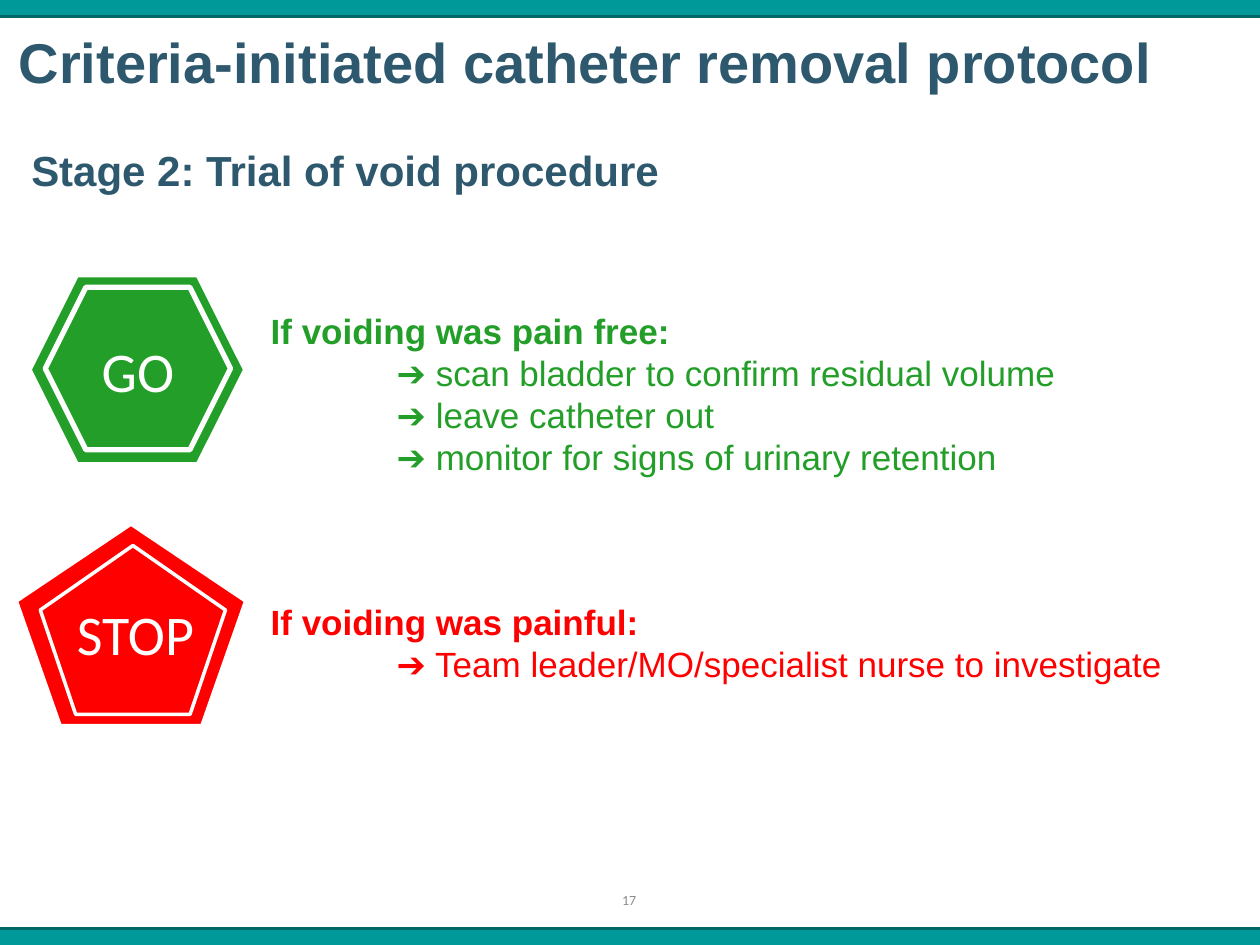
from dataclasses import dataclass

from lxml import etree
from pptx import Presentation
from pptx.dml.color import RGBColor
from pptx.enum import shapes, text
from pptx.oxml import ns
from pptx.util import Inches, Pt

TEAL = RGBColor(0x00, 0x99, 0x99)
DARK_TEAL = RGBColor(0x00, 0x66, 0x66)
SLATE = RGBColor(0x2D, 0x58, 0x6D)
GREEN = RGBColor(0x23, 0x9F, 0x29)
RED = RGBColor(0xFF, 0x00, 0x00)
GREY = RGBColor(0x8C, 0x8C, 0x8C)
WHITE = RGBColor(0xFF, 0xFF, 0xFF)

SLIDE_WIDTH, SLIDE_HEIGHT = 10, 7.5
BAND_HEIGHT = 0.13


@dataclass(frozen=True)
class Box:
    left: float
    top: float
    width: float
    height: float

    def lengths(self) -> tuple:
        return tuple(Inches(n) for n in (self.left, self.top, self.width, self.height))


@dataclass(frozen=True)
class Style:
    size: float
    color: RGBColor
    font: str = "Arial"
    bold: bool = False
    align: text.PP_ALIGN = text.PP_ALIGN.LEFT


@dataclass(frozen=True)
class Outcome:
    """A sign with a double outline, and the steps that follow from it."""
    sign: str
    outline: shapes.MSO_SHAPE
    color: RGBColor
    line_width: float
    outer: Box
    inner: Box
    sign_box: Box
    condition: str
    steps: tuple[str, ...]
    steps_box: Box


OUTCOMES = (
    Outcome("GO", shapes.MSO_SHAPE.HEXAGON, GREEN, 3,
            Box(0.23, 2.18, 1.72, 1.51), Box(0.36, 2.28, 1.47, 1.29),
            Box(0.36, 2.7, 1.47, 0.47),
            "If voiding was pain free:",
            ("scan bladder to confirm residual volume",
             "leave catheter out",
             "monitor for signs of urinary retention"),
            Box(2.05, 2.49, 9.43, 1.26)),
    Outcome("STOP", shapes.MSO_SHAPE.REGULAR_PENTAGON, RED, 2,
            Box(0.13, 4.16, 1.82, 1.6), Box(0.32, 4.33, 1.47, 1.34),
            Box(0.3, 4.79, 1.55, 0.47),
            "If voiding was painful:",
            ("Team leader/MO/specialist nurse to investigate",),
            Box(2.05, 4.52, 7.76, 1.15)),
)


def add_frame(parent, box: Box):
    frame = parent.add_textbox(*box.lengths()).text_frame
    frame.word_wrap = True
    frame.vertical_anchor = text.MSO_ANCHOR.MIDDLE
    return frame


def write(paragraph, words: str, style: Style) -> None:
    paragraph.alignment = style.align
    run = paragraph.add_run()
    run.text = words
    run.font.name = style.font
    run.font.size = Pt(style.size)
    run.font.bold = style.bold
    run.font.color.rgb = style.color


def add_label(parent, box: Box, words: str, style: Style) -> None:
    write(add_frame(parent, box).paragraphs[0], words, style)


def add_filled(parent, kind: shapes.MSO_SHAPE, box: Box, fill: RGBColor):
    shape = parent.add_shape(kind, *box.lengths())
    shape.shadow.inherit = False
    shape.fill.solid()
    shape.fill.fore_color.rgb = fill
    shape.line.fill.background()
    return shape


def add_band(parent, top: float, edge: float) -> None:
    """Draw a full-width band with a dark rule along its inner edge."""
    add_filled(parent, shapes.MSO_SHAPE.RECTANGLE,
               Box(0, top, SLIDE_WIDTH, BAND_HEIGHT), TEAL)
    rule = parent.add_connector(shapes.MSO_CONNECTOR.STRAIGHT, Inches(0),
                                Inches(edge), Inches(SLIDE_WIDTH), Inches(edge))
    rule.line.color.rgb = DARK_TEAL
    rule.line.width = Pt(2)
    etree.SubElement(rule._element.spPr, ns.qn("a:effectLst"))


def add_sign(parent, outcome: Outcome) -> None:
    sign = parent.add_group_shape().shapes
    for box in (outcome.outer, outcome.inner):
        layer = add_filled(sign, outcome.outline, box, outcome.color)
        layer.line.color.rgb = WHITE
        layer.line.width = Pt(outcome.line_width)
    add_label(sign, outcome.sign_box, outcome.sign,
              Style(32, WHITE, "Calibri", align=text.PP_ALIGN.CENTER))


def add_steps(parent, outcome: Outcome) -> None:
    frame = add_frame(parent, outcome.steps_box)
    write(frame.paragraphs[0], outcome.condition, Style(20, outcome.color, bold=True))
    for step in outcome.steps:
        paragraph = frame.add_paragraph()
        paragraph._p.get_or_add_pPr().set("marL", str(Inches(1)))
        write(paragraph, f"➔ {step}", Style(20, outcome.color))


def main() -> None:
    deck = Presentation()
    deck.slide_width, deck.slide_height = Inches(SLIDE_WIDTH), Inches(SLIDE_HEIGHT)
    canvas = deck.slides.add_slide(deck.slide_layouts[6]).shapes

    bottom_band = SLIDE_HEIGHT - BAND_HEIGHT
    add_band(canvas, 0, BAND_HEIGHT)
    add_band(canvas, bottom_band, bottom_band)

    add_label(canvas, Box(0.05, 0.13, 10.47, 0.71),
              "Criteria-initiated catheter removal protocol", Style(32, SLATE, bold=True))
    add_label(canvas, Box(0.15, 0.99, 9.76, 0.71),
              "Stage 2: Trial of void procedure", Style(24, SLATE, bold=True))
    for outcome in OUTCOMES:
        add_sign(canvas, outcome)
        add_steps(canvas, outcome)
    add_label(canvas, Box(3.83, 6.94, 2.33, 0.4), "17",
              Style(8, GREY, "Calibri", align=text.PP_ALIGN.CENTER))

    deck.save("out.pptx")


if __name__ == "__main__":
    main()
